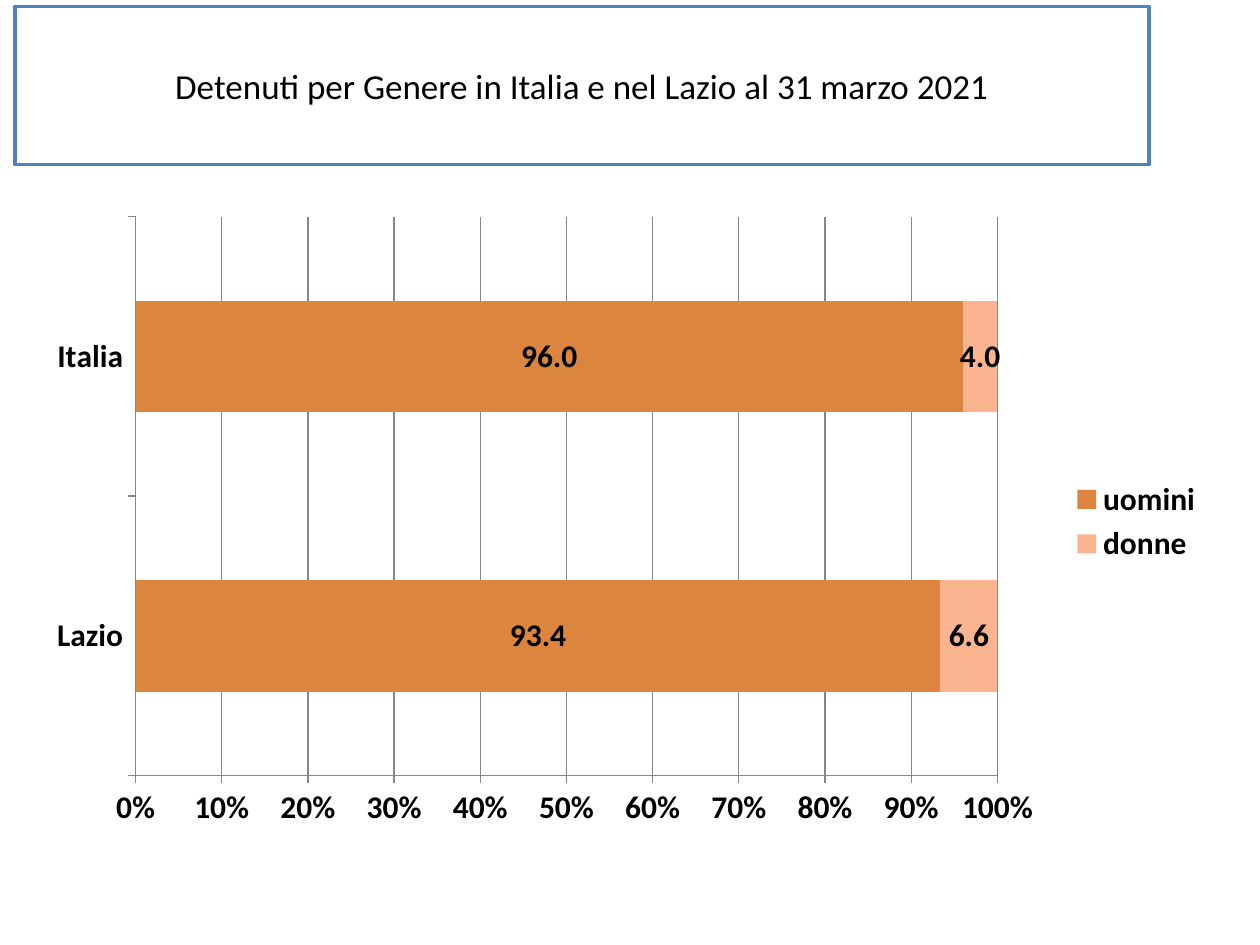
import pptx
import pptx.util
import pptx.chart.data
import pptx.dml.color
import pptx.enum.chart
import pptx.enum.text
import pptx.oxml

SLIDE_WIDTH, SLIDE_HEIGHT = 10, 7.5
HEADING = "Detenuti per Genere in Italia e nel Lazio al 31 marzo 2021"
HEADING_SHARES = (0.012, 0.007, 0.9, 0.167)
GENDER_SHARES = (0.028, 0.216, 0.937, 0.672)
PLOT_SHARES = {"x": 0.085, "y": 0.02, "w": 0.73, "h": 0.88}
REGIONS = ["Lazio", "Italia"]
GENDERS = [
    ("uomini", (93.4, 96), "DC853E"),
    ("donne", (6.6, 4), "FAB490"),
]
FONT, BLACK, WHITE, BORDER, GRID = "Calibri", "000000", "FFFFFF", "4F81BD", "868686"


def color(value):
    return pptx.dml.color.RGBColor.from_string(value)


def place(shares):
    sizes = (SLIDE_WIDTH, SLIDE_HEIGHT) * 2
    return [pptx.util.Inches(share * size) for share, size in zip(shares, sizes)]


def style_font(font, size, bold):
    font.name, font.size, font.bold = FONT, pptx.util.Pt(size), bold
    font.color.rgb = color(BLACK)


def style_line(line, value, width):
    line.color.rgb = color(value)
    line.width = pptx.util.Pt(width)


def add_heading(slide):
    heading = slide.shapes.title
    heading.left, heading.top, heading.width, heading.height = place(HEADING_SHARES)
    heading.fill.solid()
    heading.fill.fore_color.rgb = color(WHITE)
    style_line(heading.line, BORDER, 2)
    frame = heading.text_frame
    frame.word_wrap = True
    frame.vertical_anchor = pptx.enum.text.MSO_ANCHOR.MIDDLE
    paragraph = frame.paragraphs[0]
    paragraph.alignment = pptx.enum.text.PP_ALIGN.CENTER
    run = paragraph.add_run()
    run.text = HEADING
    style_font(run.font, 20, False)


def set_plot_layout(chart):
    settings = '<c:layoutTarget val="inner"/><c:xMode val="edge"/><c:yMode val="edge"/>'
    settings += "".join(f'<c:{key} val="{share}"/>' for key, share in PLOT_SHARES.items())
    layout = pptx.oxml.parse_xml(
        '<c:layout xmlns:c="http://schemas.openxmlformats.org/drawingml/2006/chart">'
        f"<c:manualLayout>{settings}</c:manualLayout></c:layout>"
    )
    plot_area = chart.plots[0]._element.getparent()
    for previous in plot_area.xpath("c:layout"):
        plot_area.remove(previous)
    plot_area.insert(0, layout)


def add_gender_chart(slide):
    shares = pptx.chart.data.CategoryChartData(number_format="0.0")
    shares.categories = REGIONS
    for gender, values, _ in GENDERS:
        shares.add_series(gender, values)
    chart = slide.shapes.add_chart(
        pptx.enum.chart.XL_CHART_TYPE.BAR_STACKED_100, *place(GENDER_SHARES), shares
    ).chart
    style_font(chart.font, 18, True)
    chart.has_title = False
    chart.has_legend = True
    chart.legend.position = pptx.enum.chart.XL_LEGEND_POSITION.RIGHT
    chart.legend.include_in_layout = False

    bars = chart.plots[0]
    bars.gap_width, bars.overlap, bars.vary_by_categories = 150, 100, False
    for series, (_, _, fill) in zip(bars.series, GENDERS):
        series.format.fill.solid()
        series.format.fill.fore_color.rgb = color(fill)
        labels = series.data_labels
        labels.show_value = True
        labels.number_format, labels.number_format_is_linked = "0.0", False
        labels.position = pptx.enum.chart.XL_LABEL_POSITION.CENTER
        style_font(labels.font, 18, True)

    percent = chart.value_axis
    percent.minimum_scale, percent.maximum_scale, percent.major_unit = 0, 1, 0.1
    percent.has_major_gridlines = True
    style_line(percent.major_gridlines.format.line, GRID, 0.75)
    percent.tick_labels.number_format = "0%"
    percent.tick_labels.number_format_is_linked = False
    for axis in (chart.category_axis, percent):
        axis.major_tick_mark = pptx.enum.chart.XL_TICK_MARK.OUTSIDE
        style_line(axis.format.line, GRID, 0.75)
    set_plot_layout(chart)


def main():
    deck = pptx.Presentation()
    deck.slide_width = pptx.util.Inches(SLIDE_WIDTH)
    deck.slide_height = pptx.util.Inches(SLIDE_HEIGHT)
    slide = deck.slides.add_slide(deck.slide_layouts.get_by_name("Title Only"))
    add_heading(slide)
    add_gender_chart(slide)
    deck.save("out.pptx")


if __name__ == "__main__":
    main()
